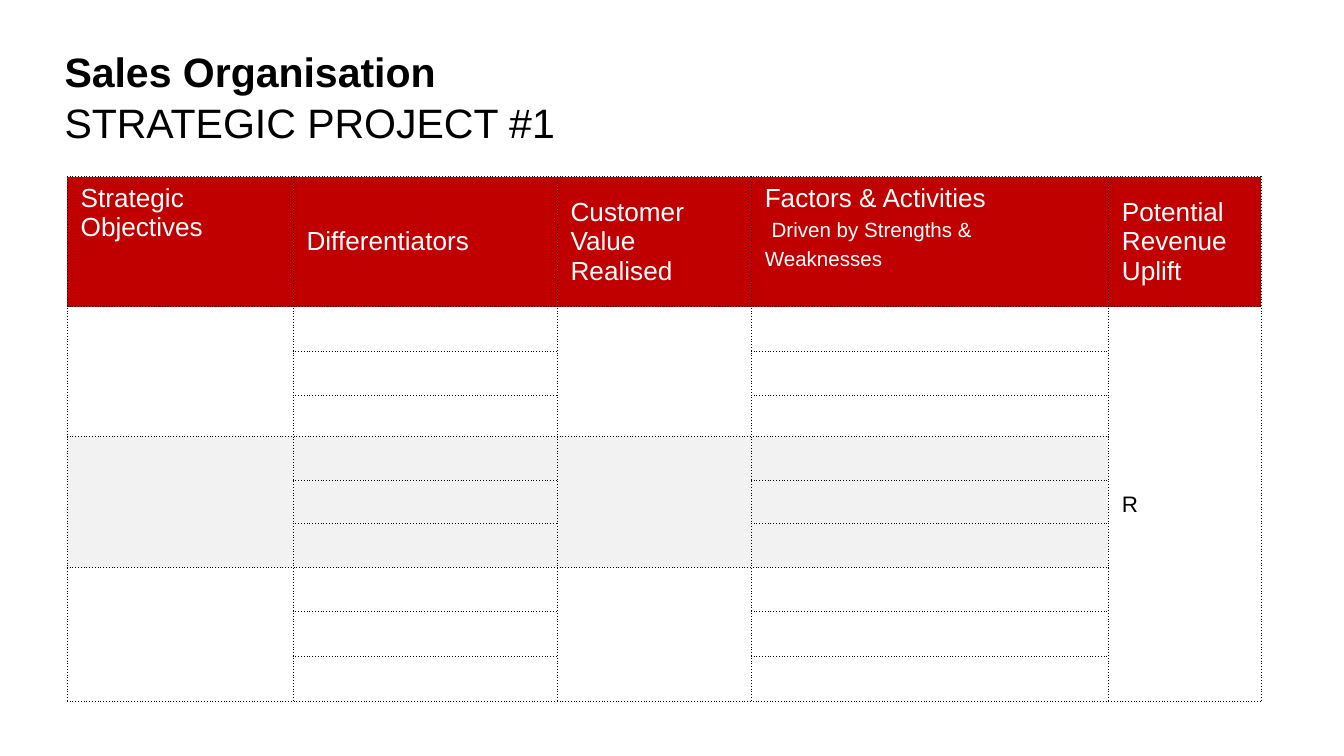
import pptx
import pptx.dml.color
import pptx.enum.text
import pptx.oxml
import pptx.oxml.ns
import pptx.util

Cm = pptx.util.Cm
Pt = pptx.util.Pt
RGB = pptx.dml.color.RGBColor
ANCHOR = pptx.enum.text.MSO_ANCHOR

BLACK = RGB(0x00, 0x00, 0x00)
WHITE = RGB(0xFF, 0xFF, 0xFF)
RED = RGB(0xC0, 0x00, 0x00)
GREY = RGB(0xF2, 0xF2, 0xF2)


class Deck:
    """Holds the style and the current slide."""
    font = "Arial"

    def __init__(self, width, height):
        self.prs = pptx.Presentation()
        self.prs.slide_width, self.prs.slide_height = width, height
        self.s = self.prs.slides.add_slide(self.prs.slide_layouts[6])

    def run(self, p, text, size, color, bold=False):
        r = p.add_run()
        r.text = text
        r.font.name, r.font.size, r.font.bold = self.font, Pt(size), bold
        r.font.color.rgb = color

    def title(self, x, y, w, h, lines, size):
        tf = self.s.shapes.add_textbox(x, y, w, h).text_frame
        tf.word_wrap = True
        tf.vertical_anchor = ANCHOR.MIDDLE
        p = tf.paragraphs[0]
        p.line_spacing = 1.04
        for i, (text, bold) in enumerate(lines):
            if i:
                p.add_line_break()
            self.run(p, text, size, BLACK, bold)

    def table(self, x, y, cols, rows):
        tbl = self.s.shapes.add_table(len(rows), len(cols), x, y,
                                      Cm(sum(cols)), Cm(sum(rows))).table
        tbl.first_row = tbl.horz_banding = False
        for column, width in zip(tbl.columns, cols):
            column.width = Cm(width)
        for row, height in zip(tbl.rows, rows):
            row.height = Cm(height)
        return tbl

    def cell(self, cell, fill):
        tcPr = cell._tc.get_or_add_tcPr()
        for side in "LRTB":
            tcPr.append(pptx.oxml.parse_xml(
                f'<a:ln{side} {pptx.oxml.ns.nsdecls("a")} w="{Pt(0.5)}">'
                f'<a:solidFill><a:srgbClr val="{BLACK}"/></a:solidFill>'
                f'<a:prstDash val="sysDot"/></a:ln{side}>'))
        cell.fill.solid()
        cell.fill.fore_color.rgb = fill
        cell.vertical_anchor = ANCHOR.MIDDLE


def main():
    deck = Deck(Cm(25.4), Cm(14.29))

    # Title
    deck.title(Cm(0.97), Cm(0.61), Cm(22.86), Cm(2.39),
               [("Sales Organisation", True), ("STRATEGIC PROJECT #1", False)], 22)

    # Table grid: a header, then three groups of three rows
    cols = [4.27, 4.99, 3.67, 6.75, 2.89]
    rows = [2.46, 0.85, 0.83, 0.76, 0.83, 0.83, 0.83, 0.82, 0.86, 0.85]
    tbl = deck.table(Cm(1.27), Cm(3.34), cols, rows)
    last_row, last_col = len(rows) - 1, len(cols) - 1

    # Header
    headings = ["Strategic Objectives", "Differentiators", "Customer Value Realised",
                "Factors & Activities", "Potential Revenue Uplift"]
    for col, text in enumerate(headings):
        cell = tbl.cell(0, col)
        deck.cell(cell, RED)
        deck.run(cell.text_frame.paragraphs[0], text, 14, WHITE)
    for col in (0, 3):
        tbl.cell(0, col).vertical_anchor = ANCHOR.TOP

    # Smaller second line under Factors & Activities
    p = tbl.cell(0, 3).text_frame.add_paragraph()
    p.line_spacing = Pt(15.6)
    p._p.get_or_add_pPr().set("indent", str(Cm(0.13)))
    deck.run(p, "Driven by Strengths &", 11, WHITE)
    p.add_line_break()
    deck.run(p, "Weaknesses", 11, WHITE)

    # Body cells, the middle group shaded
    for row in range(1, last_row + 1):
        for col in range(len(cols)):
            cell = tbl.cell(row, col)
            shaded = 4 <= row <= 6 and col != last_col
            deck.cell(cell, GREY if shaded else WHITE)
            cell.margin_top = cell.margin_bottom = 0

    # Merged cells
    for top in (1, 4, 7):
        for col in (0, 2):
            tbl.cell(top, col).merge(tbl.cell(top + 2, col))
    uplift = tbl.cell(1, last_col)
    uplift.merge(tbl.cell(last_row, last_col))
    deck.run(uplift.text_frame.paragraphs[0], "R", 12, BLACK)

    deck.prs.save("out.pptx")


if __name__ == "__main__":
    main()
